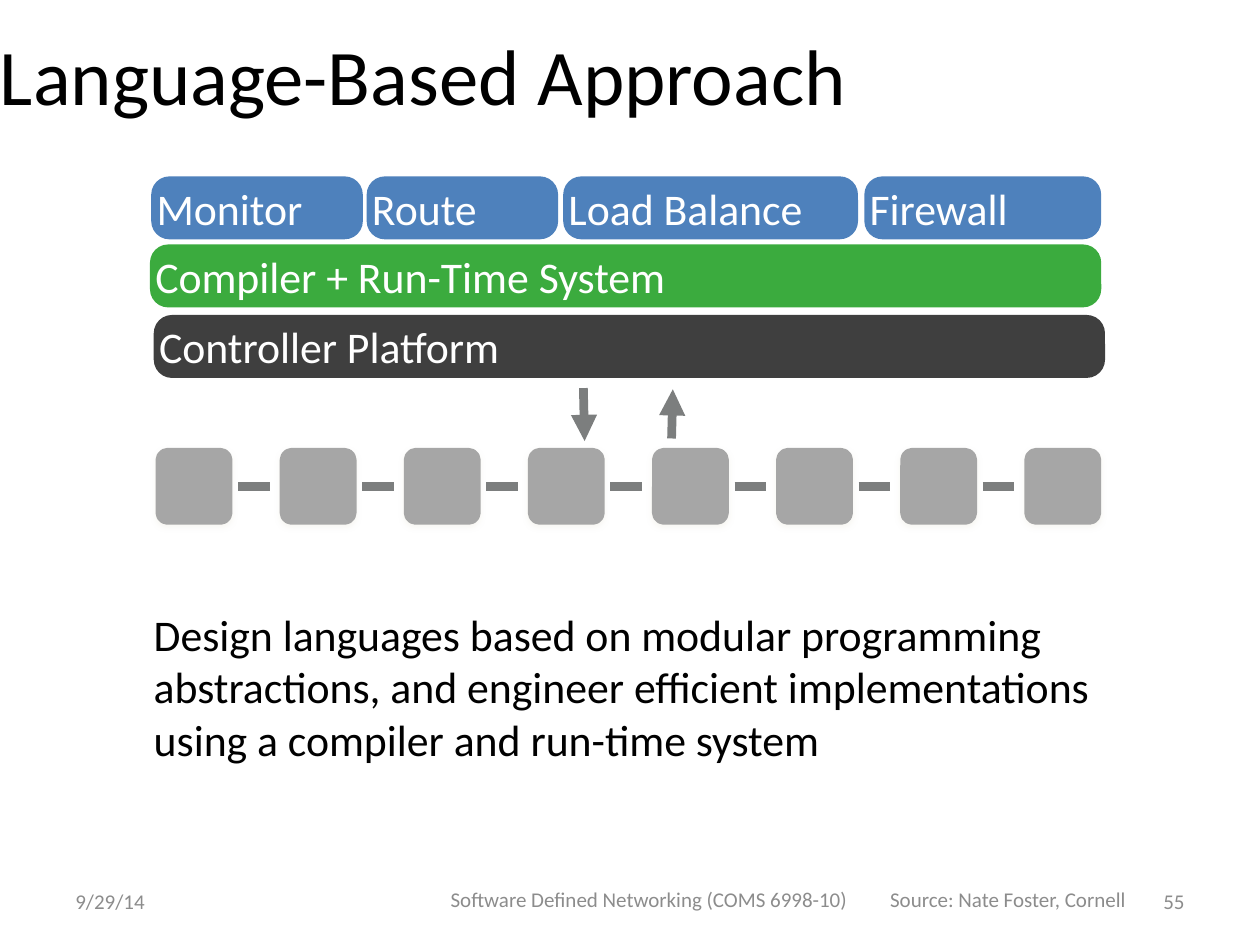
from lxml import etree
from pptx import Presentation
from pptx import util as u
from pptx.dml.color import RGBColor
from pptx.enum import shapes, text
from pptx.oxml.ns import qn

COLORS = {
    "ink": "000000",
    "white": "FFFFFF",
    "app": "4E81BC",
    "compiler": "3BAB3E",
    "controller": "3F3F3F",
    "switch": "A6A6A6",
    "link": "7C7E7E",
    "footer": "8C8C8C",
    "shadow": "EEECE1",
}
FONT = "Calibri"
APPS = [
    ("Monitor", 1.2, 1.68),
    ("Route", 2.91, 1.52),
    ("Load Balance", 4.47, 2.34),
    ("Firewall", 6.86, 1.88),
]
LAYERS = [
    ("Compiler + Run-Time System", 1.19, 1.94, "compiler", text.MSO_ANCHOR.MIDDLE),
    ("Controller Platform", 1.22, 2.5, "controller", text.MSO_ANCHOR.BOTTOM),
]
FOOTERS = [
    ("9/29/14", 0.5, 6.95, 2.33, 0.4, text.PP_ALIGN.LEFT),
    ("Software Defined Networking (COMS 6998-10) ", 3.42, 6.92, 3.5, 0.43, text.PP_ALIGN.CENTER),
    ("Source: Nate Foster, Cornell", 6.25, 6.92, 3.5, 0.43, text.PP_ALIGN.CENTER),
    ("55", 7.17, 6.95, 2.33, 0.4, text.PP_ALIGN.RIGHT),
]
SWITCH_COUNT = 8
SWITCH_LEFT, SWITCH_TOP, SWITCH_SIZE, SWITCH_PITCH = 1.27, 3.59, 0.54, 0.985
LINK_GAP, LINK_LENGTH = 0.08, 0.25


def rgb(name):
    return RGBColor.from_string(COLORS[name])


def write(sp, content, size, color, align=text.PP_ALIGN.LEFT,
          anchor=text.MSO_ANCHOR.MIDDLE, inset=0):
    tf = sp.text_frame
    tf.word_wrap = True
    tf.vertical_anchor = anchor
    tf.margin_left = tf.margin_right = u.Inches(inset)
    tf.margin_top = tf.margin_bottom = u.Inches(inset / 2)
    tf.text = content
    p = tf.paragraphs[0]
    p.alignment = align
    font = p.runs[0].font
    font.name, font.size = FONT, u.Pt(size)
    font.color.rgb = rgb(color)


def add_text(s, content, x, y, w, h, size, color, **style):
    sp = s.shapes.add_textbox(u.Inches(x), u.Inches(y), u.Inches(w), u.Inches(h))
    write(sp, content, size, color, **style)


def add_rounded(s, x, y, w, h, radius, fill):
    sp = s.shapes.add_shape(shapes.MSO_SHAPE.ROUNDED_RECTANGLE,
                            u.Inches(x), u.Inches(y), u.Inches(w), u.Inches(h))
    sp.adjustments[0] = radius
    sp.fill.solid()
    sp.fill.fore_color.rgb = rgb(fill)
    sp.line.fill.background()
    sp.shadow.inherit = False
    return sp


def add_layer(s, label, x, y, w, fill, anchor=text.MSO_ANCHOR.MIDDLE):
    sp = add_rounded(s, x, y, w, 0.5, 0.29, fill)
    write(sp, label, 25, "white", anchor=anchor)


def add_switch(s, x):
    sp = add_rounded(s, x, SWITCH_TOP, SWITCH_SIZE, SWITCH_SIZE, 0.11, "switch")
    sp.line.color.rgb = rgb("switch")
    sp.line.width = u.Pt(5)
    effects = sp._element.spPr.find(qn("a:effectLst"))
    shadow = etree.SubElement(effects, qn("a:outerShdw"), blurRad=str(u.Pt(3)),
                              dist=str(u.Pt(1.6)), dir="5400000", rotWithShape="0")
    color = etree.SubElement(shadow, qn("a:srgbClr"), val=COLORS["shadow"])
    etree.SubElement(color, qn("a:alpha"), val="38000")


def add_line(s, x1, y1, x2, y2, arrow=False):
    line = s.shapes.add_connector(shapes.MSO_CONNECTOR.STRAIGHT, u.Inches(x1),
                                  u.Inches(y1), u.Inches(x2), u.Inches(y2))
    line.line.color.rgb = rgb("link")
    line.line.width = u.Pt(5)
    if arrow:
        etree.SubElement(line.line._get_or_add_ln(), qn("a:tailEnd"), type="triangle")
    etree.SubElement(line._element.spPr, qn("a:effectLst"))


def add_network(s):
    middle = SWITCH_TOP + SWITCH_SIZE / 2
    for i in range(SWITCH_COUNT):
        x = SWITCH_LEFT + i * SWITCH_PITCH
        add_switch(s, x)
        if i < SWITCH_COUNT - 1:
            start = x + SWITCH_SIZE + LINK_GAP
            add_line(s, start, middle, start + LINK_LENGTH, middle)


def main():
    prs = Presentation()
    prs.slide_width, prs.slide_height = u.Inches(10), u.Inches(7.5)
    s = prs.slides.add_slide(prs.slide_layouts[6])

    add_text(s, "Language-Based Approach", 0, 0.1, 10, 0.98, 45, "ink")
    for label, x, w in APPS:
        add_layer(s, label, x, 1.4, w, "app")
    for label, x, y, fill, anchor in LAYERS:
        add_layer(s, label, x, y, 7.55, fill, anchor)

    add_network(s)
    add_line(s, 4.63, 3.08, 4.64, 3.5, arrow=True)
    add_line(s, 5.33, 3.48, 5.34, 3.09, arrow=True)

    add_text(s, "Design languages based on modular programming abstractions, "
             "and engineer efficient implementations using a compiler and "
             "run-time system", 1.22, 4.81, 7.55, 1.27, 25, "ink")
    for content, x, y, w, h, align in FOOTERS:
        add_text(s, content, x, y, w, h, 12, "footer", align=align, inset=0.1)

    prs.save("out.pptx")


if __name__ == "__main__":
    main()
